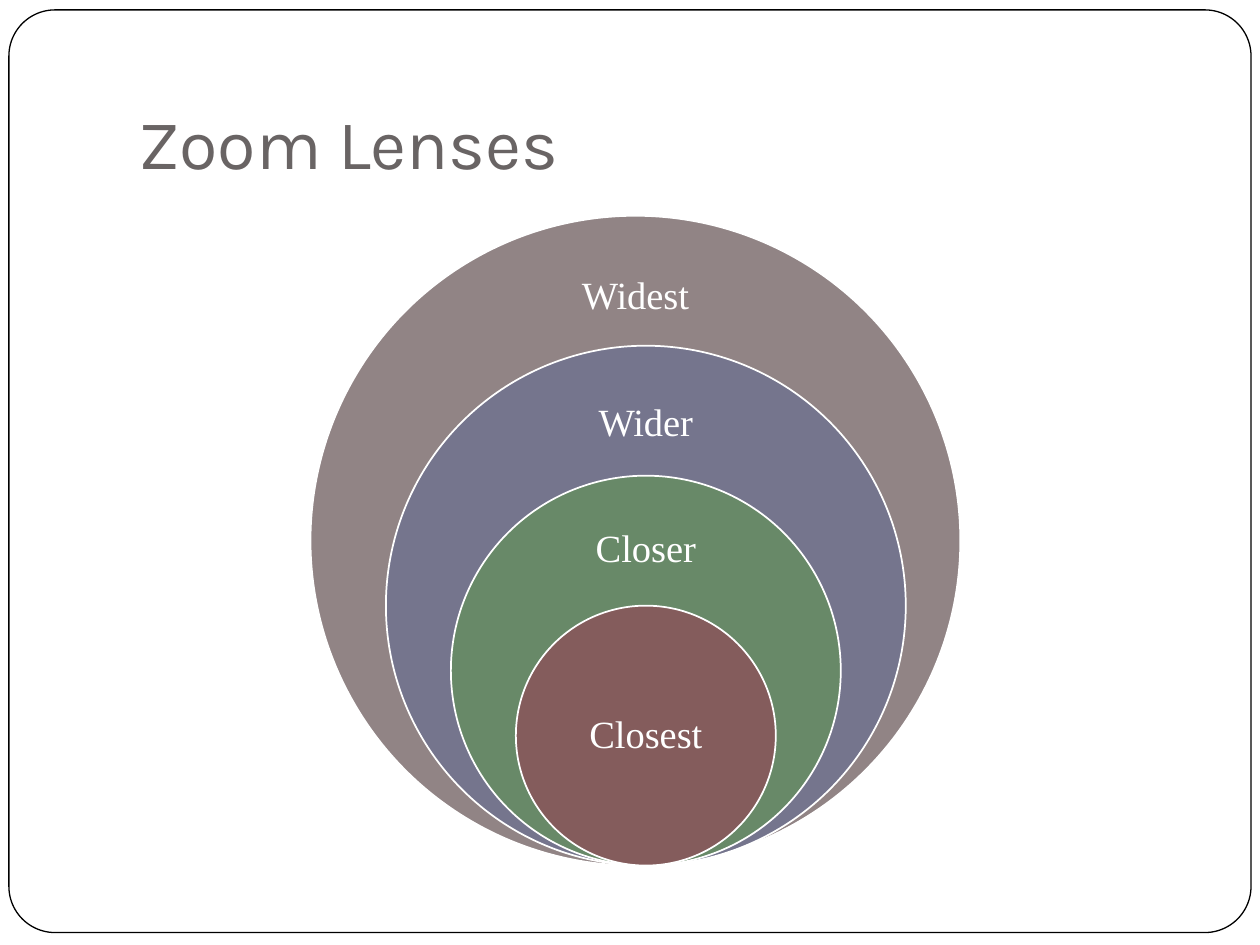
import pptx
import pptx.util
import pptx.dml.color
import pptx.enum.shapes
import pptx.enum.text

Cm = pptx.util.Cm
Pt = pptx.util.Pt
RGBColor = pptx.dml.color.RGBColor
SHAPE = pptx.enum.shapes.MSO_SHAPE
ALIGN = pptx.enum.text.PP_ALIGN
ANCHOR = pptx.enum.text.MSO_ANCHOR

WHITE = RGBColor(0xFF, 0xFF, 0xFF)
BLACK = RGBColor(0x00, 0x00, 0x00)
TITLE_GREY = RGBColor(0x69, 0x64, 0x64)
TAUPE = RGBColor(0x91, 0x84, 0x85)
SLATE = RGBColor(0x75, 0x75, 0x8D)
GREEN = RGBColor(0x68, 0x89, 0x68)
MAROON = RGBColor(0x84, 0x5C, 0x5C)

deck = pptx.Presentation()
deck.slide_width = Cm(25.4)
deck.slide_height = Cm(19.05)
slide = deck.slides.add_slide(deck.slide_layouts[6])


def add_outlined(preset, left, top, width, height, fill, line, weight):
    shape = slide.shapes.add_shape(preset, Cm(left), Cm(top), Cm(width), Cm(height))
    shape.shadow.inherit = False
    shape.fill.solid()
    shape.fill.fore_color.rgb = fill
    shape.line.color.rgb = line
    shape.line.width = Pt(weight)
    return shape


def add_text(text, left, top, width, height, *, font, size, color, anchor,
             insets, align=ALIGN.LEFT, line_spacing=1.0, space_after=0):
    frame = slide.shapes.add_textbox(Cm(left), Cm(top), Cm(width), Cm(height)).text_frame
    frame.word_wrap = True
    frame.vertical_anchor = anchor
    (frame.margin_left, frame.margin_top,
     frame.margin_right, frame.margin_bottom) = [Cm(inset) for inset in insets]
    paragraph = frame.paragraphs[0]
    paragraph.alignment = align
    paragraph.line_spacing = line_spacing
    paragraph.space_after = Pt(space_after)
    run = paragraph.add_run()
    run.text = text
    run.font.name = font
    run.font.size = Pt(size)
    run.font.color.rgb = color


# Rounded slide border
border = add_outlined(SHAPE.ROUNDED_RECTANGLE, 0.18, 0.2, 25.04, 18.6, WHITE, BLACK, 0.75)
border.adjustments[0] = 0.05

# Title
add_text("Zoom Lenses", 2.54, 0.76, 21.59, 3.18, font="Karla", size=40,
         color=TITLE_GREY, anchor=ANCHOR.BOTTOM, insets=(0.25, 0.13, 0.25, 0.25))

# Nested circles share a bottom edge; each is one step smaller than the last.
# Label offset and height are fractions of the circle's diameter.
step = 2.62
circles_bottom = 17.45
zoom_levels = [
    # name, colour, diameter in steps, centre x, label offset, label height
    ("Widest", TAUPE, 5, 12.81, 0.05, 0.15),
    ("Wider", SLATE, 4, 13.02, 0.06, 0.18),
    ("Closer", GREEN, 3, 13.02, 0.08, 0.22),
    ("Closest", MAROON, 2, 13.02, 0.25, 0.5),
]
label_width = 3.66

for name, color, steps, center, label_offset, label_height in zoom_levels:
    diameter = steps * step
    top = circles_bottom - diameter
    add_outlined(SHAPE.OVAL, center - diameter / 2, top, diameter, diameter,
                 color, WHITE, 1)
    add_text(name, center - label_width / 2, top + label_offset * diameter,
             label_width, label_height * diameter, font="Times New Roman", size=22,
             color=WHITE, anchor=ANCHOR.MIDDLE, insets=(0.43,) * 4,
             align=ALIGN.CENTER, line_spacing=0.9, space_after=7.7)

deck.save("out.pptx")
